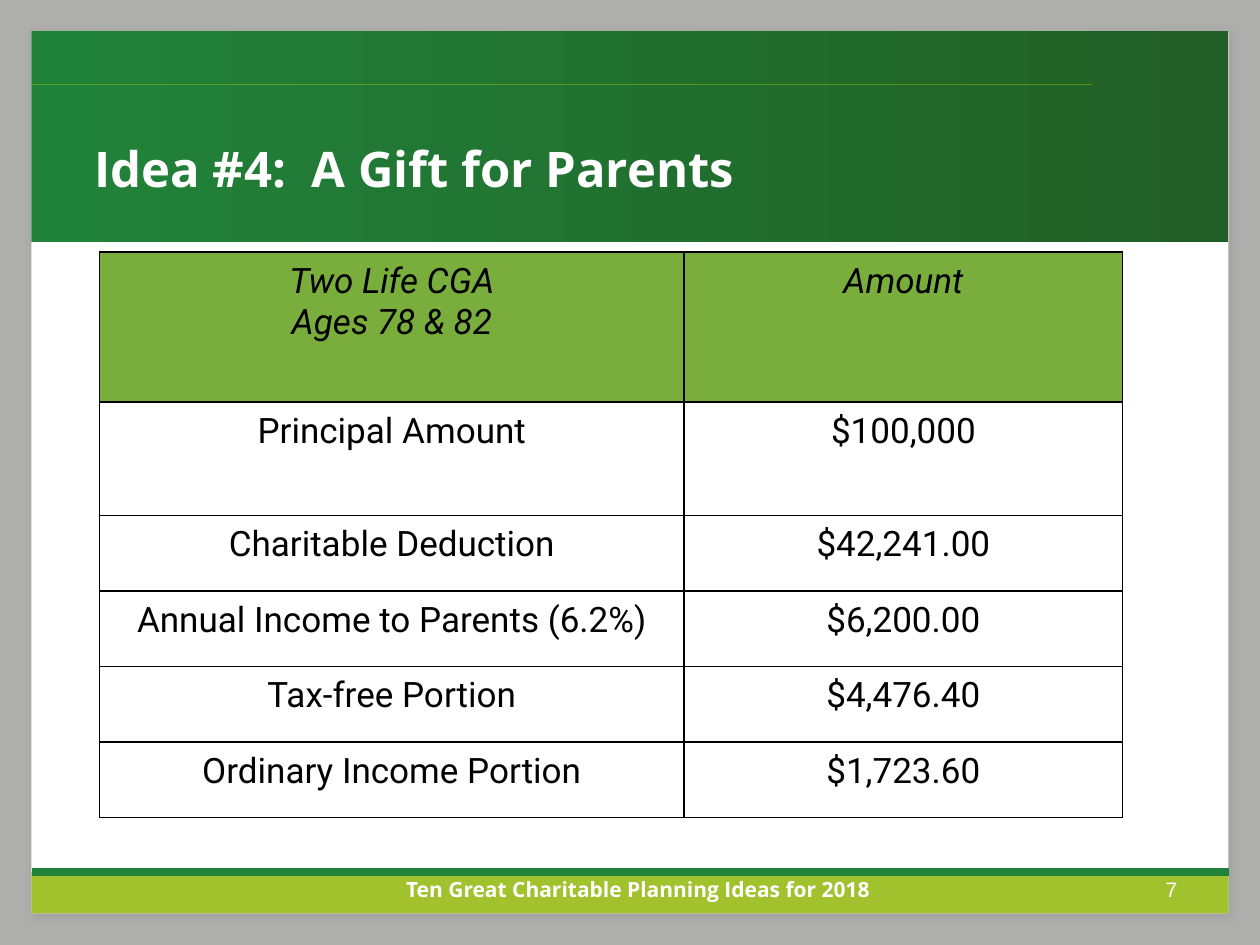
import pptx
import pptx.dml.color
import pptx.enum.shapes
import pptx.enum.text
import pptx.oxml
import pptx.oxml.ns
import pptx.util

TITLE = "Idea #4:  A Gift for Parents"
FOOTER = "Ten Great Charitable Planning Ideas for 2018"
PAGE_NUMBER = "7"
ROWS = [
    ("Two Life CGA\nAges 78 & 82", "Amount"),
    ("Principal Amount", "$100,000"),
    ("Charitable Deduction", "$42,241.00"),
    ("Annual Income to Parents (6.2%)", "$6,200.00"),
    ("Tax-free Portion", "$4,476.40"),
    ("Ordinary Income Portion", "$1,723.60"),
]
ROW_HEIGHTS = [1.19, 0.9] + [0.6] * 4
COLUMN_WIDTHS = [4.64, 3.48]

COLORS = {
    "surround": "AEAEAD", "paper": "FFFFFF", "footer": "A1C12D",
    "green": "21833A", "dark green": "215E25", "lime": "99CC00",
    "header": "79AE3D", "ink": "000000", "shadow": "808080",
}
WIDTH, HEIGHT, MARGIN = 10, 7.5, 0.25
RIGHT, BOTTOM = WIDTH - MARGIN, HEIGHT - MARGIN
PAGE_WIDTH = WIDTH - 2 * MARGIN
FOOTER_TOP = 6.92

Inches, Pt = pptx.util.Inches, pptx.util.Pt
CENTER = pptx.enum.text.PP_ALIGN.CENTER
NAMESPACE = pptx.oxml.ns.nsdecls("a")


def rgb(name):
    return pptx.dml.color.RGBColor.from_string(COLORS[name])


def add_panel(slide, left, top, width, height, color=None):
    panel = slide.shapes.add_shape(
        pptx.enum.shapes.MSO_SHAPE.RECTANGLE,
        *map(Inches, (left, top, width, height)))
    panel.shadow.inherit = False
    panel.line.fill.background()
    if color:
        panel.fill.solid()
        panel.fill.fore_color.rgb = rgb(color)
    return panel


def add_rule(slide, x_end, y, color, weight):
    rule = slide.shapes.add_connector(
        pptx.enum.shapes.MSO_CONNECTOR.STRAIGHT,
        *map(Inches, (MARGIN, y, x_end, y)))
    rule.line.color.rgb = rgb(color)
    rule.line.width = Pt(weight)
    rule._element.spPr.append(
        pptx.oxml.parse_xml(f"<a:effectLst {NAMESPACE}/>"))
    return rule


def write(frame, text, align=None, **font):
    frame.text = text
    color = rgb(font.pop("color"))
    for paragraph in frame.paragraphs:
        paragraph.alignment = align
        for run in paragraph.runs:
            run.font.color.rgb = color
            for key, value in font.items():
                setattr(run.font, key, value)


def clear_margins(frame):
    frame.word_wrap = True
    for side in ("left", "top", "right", "bottom"):
        setattr(frame, f"margin_{side}", 0)


def add_note(slide, box, text, **style):
    frame = slide.shapes.add_textbox(*map(Inches, box)).text_frame
    clear_margins(frame)
    write(frame, text, size=Pt(12), color="paper", **style)


def add_borders(cell):
    properties = cell._tc.get_or_add_tcPr()
    for position, side in enumerate("LRTB"):
        properties.insert(position, pptx.oxml.parse_xml(
            f'<a:ln{side} {NAMESPACE} w="{Pt(1)}"><a:solidFill>'
            f'<a:srgbClr val="{COLORS["ink"]}"/></a:solidFill></a:ln{side}>'))


def add_background(slide):
    add_panel(slide, 0, 0, WIDTH, HEIGHT, "surround")
    page = add_panel(slide, MARGIN, MARGIN, PAGE_WIDTH, BOTTOM - MARGIN, "paper")
    page._element.spPr.find(pptx.oxml.ns.qn("a:effectLst")).append(
        pptx.oxml.parse_xml(
            f'<a:outerShdw {NAMESPACE} blurRad="{Pt(5)}" dist="{Pt(2)}" '
            f'dir="2700000"><a:srgbClr val="{COLORS["shadow"]}">'
            '<a:alpha val="37000"/></a:srgbClr></a:outerShdw>'))
    add_panel(slide, MARGIN, FOOTER_TOP, PAGE_WIDTH, BOTTOM - FOOTER_TOP, "footer")

    banner = add_panel(slide, MARGIN, MARGIN, PAGE_WIDTH, 1.67)
    banner.fill.gradient()
    banner.fill.gradient_angle = 0
    for stop, color in zip(banner.fill.gradient_stops, ("green", "dark green")):
        stop.color.rgb = rgb(color)

    accent = add_rule(slide, 8.67, 0.67, "lime", 0.25)
    accent._element.spPr.find(".//" + pptx.oxml.ns.qn("a:srgbClr")).append(
        pptx.oxml.parse_xml(f'<a:alpha {NAMESPACE} val="71000"/>'))
    add_rule(slide, RIGHT, FOOTER_TOP, "green", 4.5)


def place_title(slide):
    title = slide.shapes.title
    slide.shapes._spTree.append(title._element)  # in front of the banner
    box = dict(left=0.75, top=0.92, width=8.5, height=0.83)
    for key, value in box.items():
        setattr(title, key, Inches(value))
    clear_margins(title.text_frame)
    title.text_frame.vertical_anchor = pptx.enum.text.MSO_ANCHOR.MIDDLE
    write(title.text_frame, TITLE, pptx.enum.text.PP_ALIGN.LEFT,
          size=Pt(28), name="Open Sans", bold=True, color="paper")


def add_amounts(slide):
    amounts = slide.shapes.add_table(
        len(ROWS), len(COLUMN_WIDTHS), Inches(0.79), Inches(2),
        Inches(sum(COLUMN_WIDTHS)), Inches(sum(ROW_HEIGHTS))).table
    amounts.first_row = amounts.horz_banding = False
    for column, width in zip(amounts.columns, COLUMN_WIDTHS):
        column.width = Inches(width)
    for r, (row, height) in enumerate(zip(amounts.rows, ROW_HEIGHTS)):
        row.height = Inches(height)
        for cell, text in zip(row.cells, ROWS[r]):
            for side in ("left", "top", "right", "bottom"):
                setattr(cell, f"margin_{side}", Inches(0.07))
            write(cell.text_frame, text, CENTER, size=Pt(20), name="Roboto",
                  bold=False, italic=r == 0, color="ink")
            if r == 0:
                cell.fill.solid()
                cell.fill.fore_color.rgb = rgb("header")
            else:
                cell.fill.background()
            add_borders(cell)


def main():
    deck = pptx.Presentation()
    deck.slide_width, deck.slide_height = Inches(WIDTH), Inches(HEIGHT)
    slide = deck.slides.add_slide(deck.slide_layouts.get_by_name("Title Only"))
    add_background(slide)
    place_title(slide)
    add_note(slide, (9.25, 6.96, 0.42, 0.19), PAGE_NUMBER, name="Arial")
    add_note(slide, (2.4, 6.96, 5.33, 0.21), FOOTER,
             align=CENTER, name="Open Sans", bold=True)
    add_amounts(slide)
    deck.save("out.pptx")


if __name__ == "__main__":
    main()
